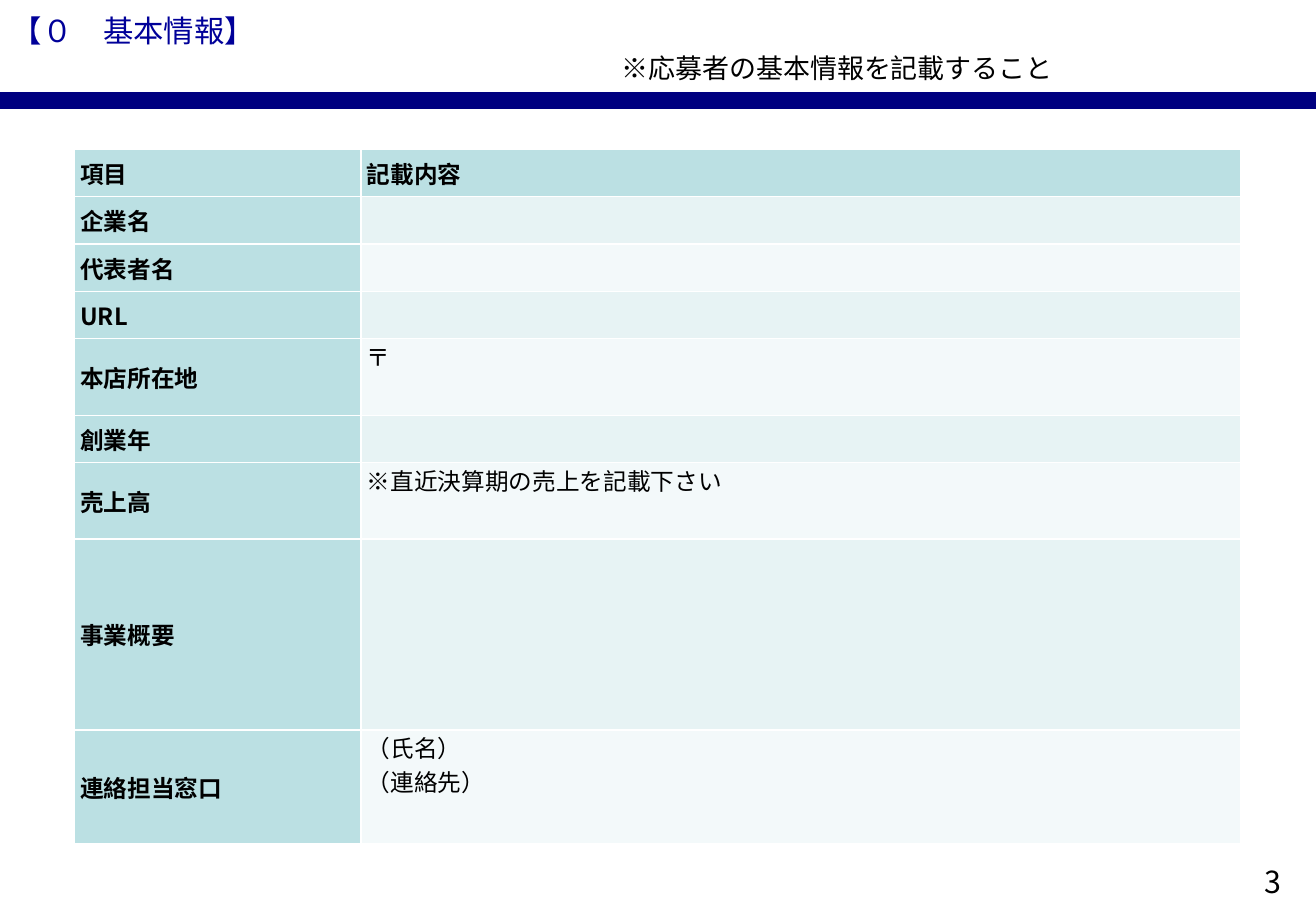
from lxml import etree
from pptx import Presentation
from pptx.dml.color import RGBColor
from pptx.enum.shapes import MSO_CONNECTOR as Connector, MSO_SHAPE as Shape
from pptx.enum.text import MSO_ANCHOR as Anchor, PP_ALIGN as Align
from pptx.oxml.ns import qn
from pptx.util import Inches, Pt

FONT = "Noto Sans CJK JP"
BLACK = RGBColor(0x00, 0x00, 0x00)
WHITE = RGBColor(0xFF, 0xFF, 0xFF)
NAVY = RGBColor(0x00, 0x00, 0x80)
TITLE_BLUE = RGBColor(0x00, 0x00, 0x99)
LABEL_FILL = RGBColor(0xBB, 0xE0, 0xE3)
BAND_FILLS = (RGBColor(0xE7, 0xF3, 0xF4), RGBColor(0xF3, 0xF9, 0xFA))

COLUMN_WIDTHS = (2.36, 7.24)
# Row height, label, lines of the entry
ROWS = [
    (0.39, "項目", ["記載内容"]),
    (0.39, "企業名", []),
    (0.39, "代表者名", []),
    (0.39, "URL", []),
    (0.63, "本店所在地", ["〒"]),
    (0.39, "創業年", []),
    (0.63, "売上高", ["※直近決算期の売上を記載下さい"]),
    (1.57, "事業概要", []),
    (0.94, "連絡担当窓口", ["（氏名）", "（連絡先）"]),
]


def add_run(paragraph, text, size, color=BLACK, bold=False):
    run = paragraph.add_run()
    run.text = text
    run.font.size = Pt(size)
    run.font.name = FONT
    run.font.bold = bold
    run.font.color.rgb = color
    east_asian = etree.SubElement(run.font._element, qn("a:ea"))
    east_asian.set("typeface", FONT)


def add_text(slide, box, text, size, color=BLACK, align=Align.LEFT):
    shape = slide.shapes.add_textbox(*map(Inches, box))
    shape.text_frame.word_wrap = True
    paragraph = shape.text_frame.paragraphs[0]
    paragraph.alignment = align
    add_run(paragraph, text, size, color)


def add_note(slide, box, text):
    shape = slide.shapes.add_shape(Shape.RECTANGLE, *map(Inches, box))
    shape.shadow.inherit = False
    shape.fill.solid()
    shape.fill.fore_color.rgb = WHITE
    shape.line.fill.background()
    frame = shape.text_frame
    frame.word_wrap = True
    frame.vertical_anchor = Anchor.MIDDLE
    frame.paragraphs[0].alignment = Align.LEFT
    add_run(frame.paragraphs[0], text, 16)


def add_rule(slide, top, width):
    line = slide.shapes.add_connector(
        Connector.STRAIGHT, 0, Inches(top), width, Inches(top))
    line.line.color.rgb = NAVY
    line.line.width = Pt(10)
    etree.SubElement(line._element.spPr, qn("a:effectLst"))


def set_borders(cell):
    properties = cell._tc.get_or_add_tcPr()
    for side in ("a:lnL", "a:lnR", "a:lnT", "a:lnB"):
        border = etree.SubElement(properties, qn(side), w=str(Pt(1)))
        fill = etree.SubElement(border, qn("a:solidFill"))
        etree.SubElement(fill, qn("a:srgbClr"), val=str(WHITE))


def fill_cell(cell, lines, color, bold):
    set_borders(cell)
    cell.fill.solid()
    cell.fill.fore_color.rgb = color
    cell.margin_left = cell.margin_right = Inches(0.05)
    cell.margin_top = cell.margin_bottom = 0
    cell.vertical_anchor = Anchor.MIDDLE if bold else Anchor.TOP
    frame = cell.text_frame
    for index, text in enumerate(lines):
        paragraph = frame.add_paragraph() if index else frame.paragraphs[0]
        add_run(paragraph, text, 14, bold=bold)


def add_profile_table(slide, left, top):
    width = sum(COLUMN_WIDTHS)
    height = sum(row[0] for row in ROWS)
    table = slide.shapes.add_table(
        len(ROWS), len(COLUMN_WIDTHS), *map(Inches, (left, top, width, height))).table
    for column, column_width in zip(table.columns, COLUMN_WIDTHS):
        column.width = Inches(column_width)
    for index, (row_height, label, entry) in enumerate(ROWS):
        header = index == 0
        table.rows[index].height = Inches(row_height)
        fill_cell(table.cell(index, 0), [label], LABEL_FILL, True)
        entry_fill = LABEL_FILL if header else BAND_FILLS[(index - 1) % 2]
        fill_cell(table.cell(index, 1), entry, entry_fill, header)


def main():
    presentation = Presentation()
    presentation.slide_width = Inches(10.83)
    presentation.slide_height = Inches(7.5)
    slide = presentation.slides.add_slide(presentation.slide_layouts[6])

    # Rule under the heading and page number
    add_rule(slide, 0.83, presentation.slide_width)
    add_text(slide, (10.14, 7.06, 0.67, 0.4), "3", 18, align=Align.CENTER)

    # Applicant's details
    add_profile_table(slide, 0.61, 1.23)

    # Heading and instruction
    add_text(slide, (0, 0.05, 10.83, 0.4), "【０　基本情報】", 18, TITLE_BLUE)
    add_note(slide, (5.02, 0.36, 5.67, 0.39), "※応募者の基本情報を記載すること")

    presentation.save("out.pptx")


if __name__ == "__main__":
    main()
